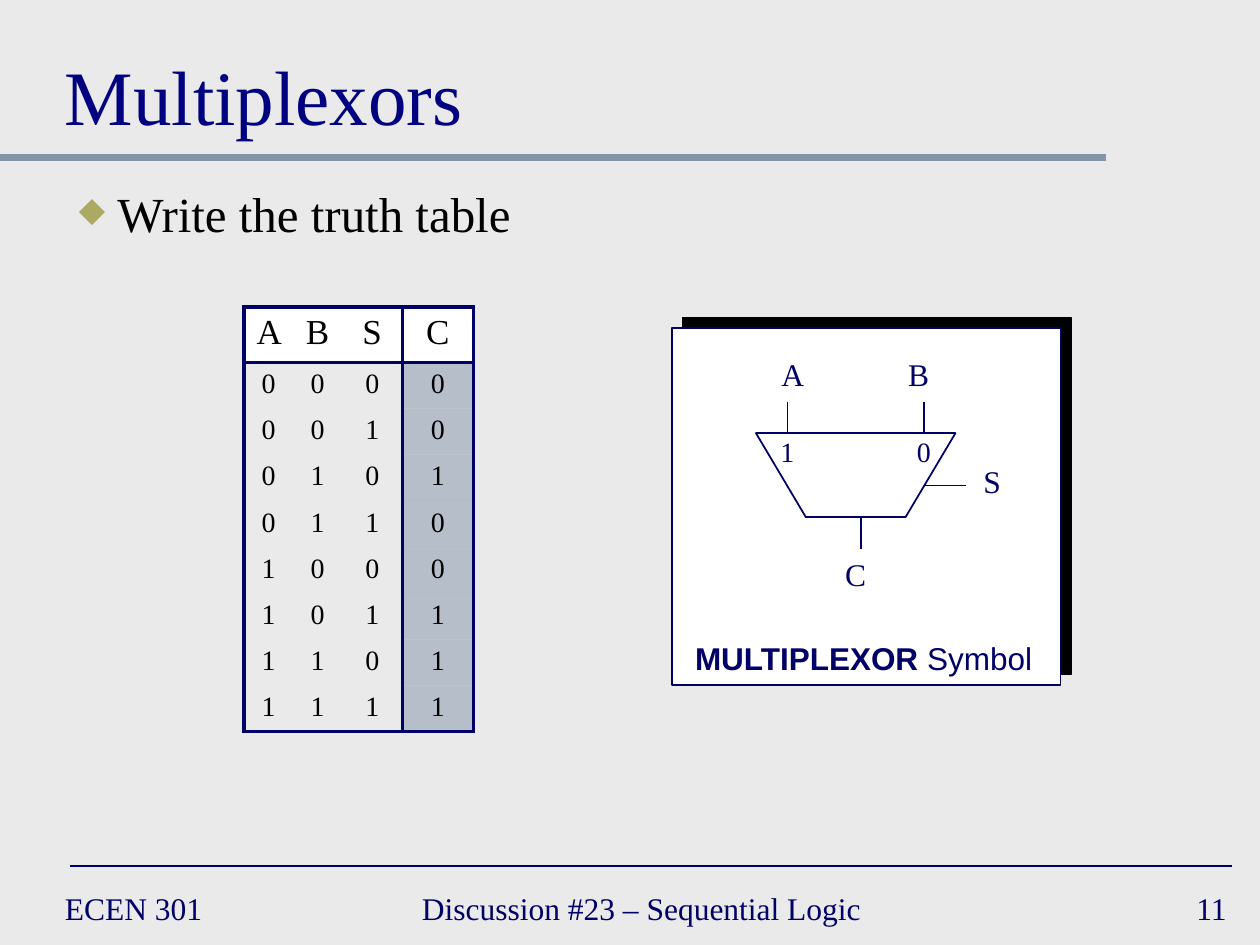
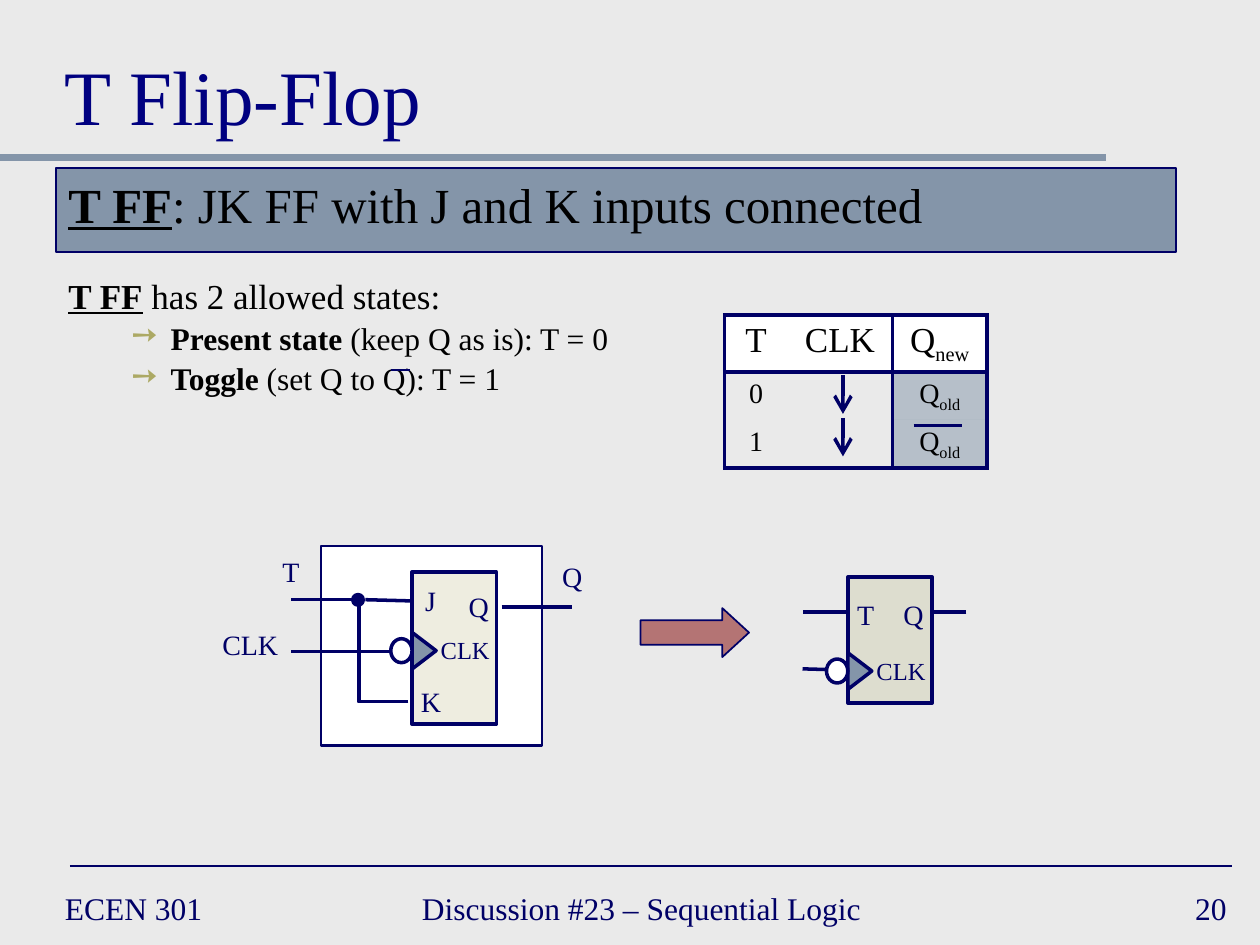
import dataclasses
import typing

import lxml.etree
import pptx
import pptx.dml.color
import pptx.enum.shapes
import pptx.enum.text
import pptx.oxml.ns
import pptx.util

Pt = pptx.util.Pt
qn = pptx.oxml.ns.qn
SHAPE = pptx.enum.shapes.MSO_SHAPE
LINK = pptx.enum.shapes.MSO_CONNECTOR
ALIGN = pptx.enum.text.PP_ALIGN
ANCHOR = pptx.enum.text.MSO_ANCHOR

# Shared colours and fonts
PAPER = pptx.dml.color.RGBColor(0xEA, 0xEA, 0xEA)
INK = pptx.dml.color.RGBColor(0x00, 0x00, 0x66)
NAVY = pptx.dml.color.RGBColor(0x00, 0x00, 0x80)
STEEL = pptx.dml.color.RGBColor(0x84, 0x95, 0xA9)
OLIVE = pptx.dml.color.RGBColor(0xAC, 0xA9, 0x64)
SAND = pptx.dml.color.RGBColor(0xAB, 0xA9, 0x64)
MAROON = pptx.dml.color.RGBColor(0x80, 0x00, 0x00)
BLACK = pptx.dml.color.RGBColor(0, 0, 0)
WHITE = pptx.dml.color.RGBColor(0xFF, 0xFF, 0xFF)
SERIF, SANS = "Times New Roman", "Arial"
PLAIN_GRID = "{2D5ABB26-0587-4C30-8999-92F81FD0307C}"
EDGE = 2.25

BOLD = {"bold": True}
KEY = {"bold": True, "underline": True}
TIGHT = {"line_spacing": 0.9}
Runs = list[tuple[str, dict]]


@dataclasses.dataclass
class Box:
    x: float
    y: float
    w: float
    h: float

    def spots(self) -> list:
        return [Pt(n) for n in (self.x, self.y, self.w, self.h)]


@dataclasses.dataclass
class Label:
    text: str
    x: float
    y: float
    w: float
    size: float = 16


@dataclasses.dataclass
class Wire:
    x1: float
    y1: float
    x2: float
    y2: float
    width: float = 2
    color: typing.Any = INK
    arrow: bool = False


@dataclasses.dataclass
class Para:
    runs: Runs
    size: float
    left: float = 0
    hang: float = 0
    mark: str = ""
    scale: int = 100
    form: dict = dataclasses.field(default_factory=dict)


def put(item: typing.Any, form: dict) -> None:
    for name, value in form.items():
        setattr(item, name, value)


def sub(node: typing.Any, tag: str, **attrs: str) -> typing.Any:
    return lxml.etree.SubElement(node, qn(tag), **attrs)


def fade(node: typing.Any, percent: int) -> None:
    """Make the first solid colour inside node partly clear."""
    sub(node.find(".//" + qn("a:srgbClr")), "a:alpha", val=str(percent * 1000))


# Text
def write(para: typing.Any, runs: Runs, size: float, color=BLACK, face=SERIF) -> None:
    for text, extra in runs:
        run = para.add_run()
        run.text = text
        form = {k: v for k, v in extra.items() if k != "base"}
        put(run.font, {"name": face, "size": Pt(size), **form})
        run.font.color.rgb = color
        if "base" in extra:
            run.font._element.set("baseline", str(extra["base"]))


def fill_text(frame: typing.Any, paras: list[Para], color=BLACK, face=SERIF, **form) -> None:
    put(frame, {"word_wrap": True, "vertical_anchor": ANCHOR.TOP, **form})
    for num, item in enumerate(paras):
        para = frame.paragraphs[0] if num == 0 else frame.add_paragraph()
        put(para, {"alignment": ALIGN.LEFT, **item.form})
        props = para._p.get_or_add_pPr()
        if item.hang:
            props.set("marL", str(Pt(item.left)))
            props.set("indent", str(-Pt(item.hang)))
        if item.mark:
            sub(sub(props, "a:buClr"), "a:srgbClr", val=str(OLIVE))
            sub(props, "a:buSzPct", val=str(item.scale * 1000))
            sub(props, "a:buChar", char=item.mark)
        write(para, item.runs, item.size, color, face)


def text_box(shapes: typing.Any, box: Box, paras: list[Para], color=BLACK, face=SERIF, **form) -> None:
    fill_text(shapes.add_textbox(*box.spots()).text_frame, paras, color, face, **form)


def label(shapes: typing.Any, item: Label, runs: Runs | None = None, face=SERIF) -> None:
    box = Box(item.x, item.y, item.w, item.size * 1.15 + 7.2)
    para = Para(runs or [(item.text, {})], item.size, form={"alignment": ALIGN.CENTER})
    text_box(shapes, box, [para], INK, face, word_wrap=False)


# Shapes and lines
def block(shapes: typing.Any, kind: typing.Any, box: Box, color: typing.Any,
          width: float = 2, clear: int = 0) -> typing.Any:
    shape = shapes.add_shape(kind, *box.spots())
    shape.shadow.inherit = False
    shape.fill.solid()
    shape.fill.fore_color.rgb = color
    if clear:
        fade(shape._element.spPr, clear)
    shape.line.color.rgb = INK
    shape.line.width = Pt(width)
    return shape


def wire(shapes: typing.Any, item: Wire, kind: typing.Any = LINK.STRAIGHT) -> typing.Any:
    ends = [Pt(n) for n in (item.x1, item.y1, item.x2, item.y2)]
    link = shapes.add_connector(kind, *ends)
    link.line.color.rgb = item.color
    link.line.width = Pt(item.width)
    props = link._element.spPr
    if item.arrow:
        sub(props.find(qn("a:ln")), "a:tailEnd", type="arrow", w="lg", len="lg")
    sub(props, "a:effectLst")
    return link


def grid(slide: typing.Any, x: float, y: float, cols: list[float], highs: list[float],
         rows: list[list[Runs]]) -> None:
    """Truth table: white head, shaded last column, ruled frame."""
    box = Box(x, y, sum(cols), sum(highs))
    table = slide.shapes.add_table(len(rows), len(cols), *box.spots()).table
    put(table, {"first_row": False, "horz_banding": False})
    table._tbl.tblPr.find(qn("a:tableStyleId")).text = PLAIN_GRID
    for col, wide in zip(table.columns, cols):
        col.width = Pt(wide)
    end, last = len(rows) - 1, len(cols) - 1
    for r, row in enumerate(rows):
        table.rows[r].height = Pt(highs[r])
        for c, runs in enumerate(row):
            cell = table.cell(r, c)
            cell.margin_bottom = Pt(0)
            props = cell._tc.get_or_add_tcPr()
            sides = {"L": c in (0, last), "R": c >= last - 1, "T": r <= 1, "B": r in (0, end)}
            for side, ruled in sides.items():
                rule = sub(props, "a:ln" + side, w=str(Pt(EDGE if ruled else 0)))
                if ruled:
                    sub(sub(rule, "a:solidFill"), "a:srgbClr", val=str(INK))
                else:
                    sub(rule, "a:noFill")
            if r and c < last:
                cell.fill.background()
            else:
                cell.fill.solid()
                cell.fill.fore_color.rgb = STEEL if r else WHITE
                if r:
                    fade(props.find(qn("a:solidFill")), 50)
            para = cell.text_frame.paragraphs[0]
            para.alignment = ALIGN.CENTER
            write(para, runs, 16 if r else 20)


def new_slide(deck: typing.Any, title: str, number: int) -> typing.Any:
    """Slide with title, two rules and footer."""
    slide = deck.slides.add_slide(deck.slide_layouts[6])
    shapes = slide.shapes
    wire(shapes, Wire(0, 90, 632, 90, 4, STEEL))
    wire(shapes, Wire(40, 495, 704, 495, 1))
    for text, x, w, side in (("ECEN 301", 30, 156, ALIGN.LEFT),
                             ("Discussion #23 – Sequential Logic", 234, 276, ALIGN.LEFT),
                             (str(number), 558, 150, ALIGN.RIGHT)):
        para = Para([(text, {})], 18, form={"alignment": side})
        text_box(shapes, Box(x, 504, w, 30), [para], INK, vertical_anchor=ANCHOR.MIDDLE)
    text_box(shapes, Box(30, 12, 660, 72), [Para([(title, {})], 44)], NAVY,
             vertical_anchor=ANCHOR.BOTTOM)
    return slide


# Slide with the multiplexor
def mux_slide(deck: typing.Any) -> None:
    slide = new_slide(deck, "Multiplexors", 11)
    text_box(slide.shapes, Box(32, 105, 556, 63),
             [Para([("Write the truth table", {})], 28, 28, 22, "◆", 70, TIGHT)])

    symbol = slide.shapes.add_group_shape().shapes
    card = block(symbol, SHAPE.RECTANGLE, Box(384, 187.5, 222, 204), WHITE, 1)
    cast = sub(card._element.spPr.find(qn("a:effectLst")), "a:outerShdw", blurRad="0",
               dist=str(Pt(8.5)), dir=str(315 * 60000), algn="ctr", rotWithShape="0")
    sub(cast, "a:srgbClr", val=str(BLACK))

    pen = symbol.build_freeform(Pt(432), Pt(247.5))
    corners = [(460.5, 295.5), (517.5, 295.5), (546, 247.5)]
    pen.add_line_segments([(Pt(x), Pt(y)) for x, y in corners], close=True)
    body = pen.convert_to_shape()
    body.shadow.inherit = False
    body.fill.background()
    body.line.color.rgb = INK
    body.line.width = Pt(1)

    for ends in ((450, 247.5, 450, 229.5), (528, 247.5, 528, 229.5),
                 (492, 313.5, 492, 295.5), (552, 277.4, 528, 277.4)):
        wire(symbol, Wire(*ends, width=1))
    for text, x, y in (("A", 432, 199.5), ("B", 504, 199.5), ("S", 546, 260.5), ("C", 468, 313.5)):
        label(symbol, Label(text, x, y, 42, 18))
    for text, x in (("1", 432), ("0", 510)):
        label(symbol, Label(text, x, 245, 36))
    label(symbol, Label("", 389, 361.5, 209, 18),
          [("MULTIPLEXOR", BOLD), (" Symbol", {})], SANS)

    # C follows A when S is 1, otherwise B
    rows = [list("ABSC")]
    for n in range(8):
        a, b, s = n >> 2, n >> 1 & 1, n & 1
        rows.append([str(bit) for bit in (a, b, s, a if s else b)])
    grid(slide, 139.5, 175.5, [28, 28, 34.5, 40.5], [31.5] + [26.4] * 8,
         [[[(text, {})] for text in row] for row in rows])


# Flip-flop body with its clock input
def chip(shapes: typing.Any, x: float, y: float, high: float, clock: float) -> None:
    block(shapes, SHAPE.RECTANGLE, Box(x, y, 48.2, high), SAND, clear=20)
    wedge = block(shapes, SHAPE.ISOSCELES_TRIANGLE, Box(x - 3.6, clock, 20.9, 13.7), STEEL)
    wedge.rotation = 90
    block(shapes, SHAPE.OVAL, Box(x - 12.2, clock, 12.2, 13.7), WHITE)
    label(shapes, Label("CLK", x + 5.4, clock - 5.4, 50, 14))


# Slide with the T flip-flop
def flip_slide(deck: typing.Any) -> None:
    slide = new_slide(deck, "T Flip-Flop", 20)
    shapes = slide.shapes
    band = block(shapes, SHAPE.RECTANGLE, Box(32, 96, 640, 48), STEEL, 0.75)
    head = Para([("T FF", KEY), (": JK FF with J and K inputs connected", {})], 28, 27, 27)
    fill_text(band.text_frame, [head])

    def low(name: str) -> Runs:
        return [("Q", {}), (name, {"base": -25000})]

    grid(slide, 414, 180, [36, 60, 54], [32.6, 27.4, 27.4],
         [[[("T", {})], [("CLK", {})], low("new")],
          [[("0", {})], [("", {})], low("old")],
          [[("1", {})], [("", {})], low("old")]])

    arrow = block(shapes, SHAPE.RIGHT_ARROW, Box(366, 347.5, 62, 28), MAROON, 1, 50)
    arrow.adjustments[1] = 0.545
    for y in (214.5, 238.8):
        wire(shapes, Wire(481.7, y, 481.7, y + 22, arrow=True))

    # Allowed states
    paras = [Para([("T FF", KEY), (" has 2 allowed states:", {})], 20, 27, 27, form=TIGHT)]
    for name, rest in (("Present state", " (keep Q as is): T = 0"), ("Toggle", " (set Q to Q): T = 1")):
        paras.append(Para([(name, BOLD), (rest, {})], 18, 58.5, 22.5, "➙",
                          form={"space_before": Pt(3.6), **TIGHT}))
    text_box(shapes, Box(32, 156, 640, 89), paras)
    for ends in ((223.2, 211.6, 234, 211.6), (522, 243.2, 550, 243.2)):
        wire(shapes, Wire(*ends, width=1.25))

    # JK flip-flop with joined inputs
    joined = shapes.add_group_shape().shapes
    block(joined, SHAPE.RECTANGLE, Box(183.6, 312, 126, 114), WHITE, 1.25)
    chip(joined, 235.5, 326.9, 87, 365)
    block(joined, SHAPE.OVAL, Box(201.6, 339.8, 6, 6), INK)
    for ends in ((235.5, 343.4, 208.8, 342.7), (286.6, 347, 327, 347),
                 (222.5, 372.2, 166.3, 372.2), (200.9, 342.7, 166.3, 342.7)):
        wire(joined, Wire(*ends))
    bend = wire(joined, Wire(205, 346.3, 233.3, 401), LINK.ELBOW)._element.spPr
    bend.find(qn("a:xfrm")).set("rot", str(180 * 60000))
    bend.find(qn("a:prstGeom")).set("prst", "bentConnector2")
    for item in (("CLK", 115, 355, 56), ("T", 154, 313.2, 24.5), ("Q", 314, 316, 26),
                 ("J", 235.5, 329.8, 21), ("Q", 260.6, 333.4, 26), ("K", 233.3, 387.4, 26)):
        label(joined, Label(*item))

    # Resulting T flip-flop
    single = shapes.add_group_shape().shapes
    chip(single, 484.5, 329.8, 72, 376.6)
    for ends in ((484.5, 349.6, 458.6, 349.6), (472.3, 382.6, 458.6, 382.2), (552.2, 349.6, 532.8, 349.6)):
        wire(single, Wire(*ends))
    for item in (("T", 482.4, 337.7, 24.5), ("Q", 509, 337.7, 26)):
        label(single, Label(*item))


def main() -> None:
    deck = pptx.Presentation()
    put(deck, {"slide_width": Pt(720), "slide_height": Pt(540)})
    ground = deck.slide_master.background.fill
    ground.solid()
    ground.fore_color.rgb = PAPER
    mux_slide(deck)
    flip_slide(deck)
    deck.save("out.pptx")


if __name__ == "__main__":
    main()
